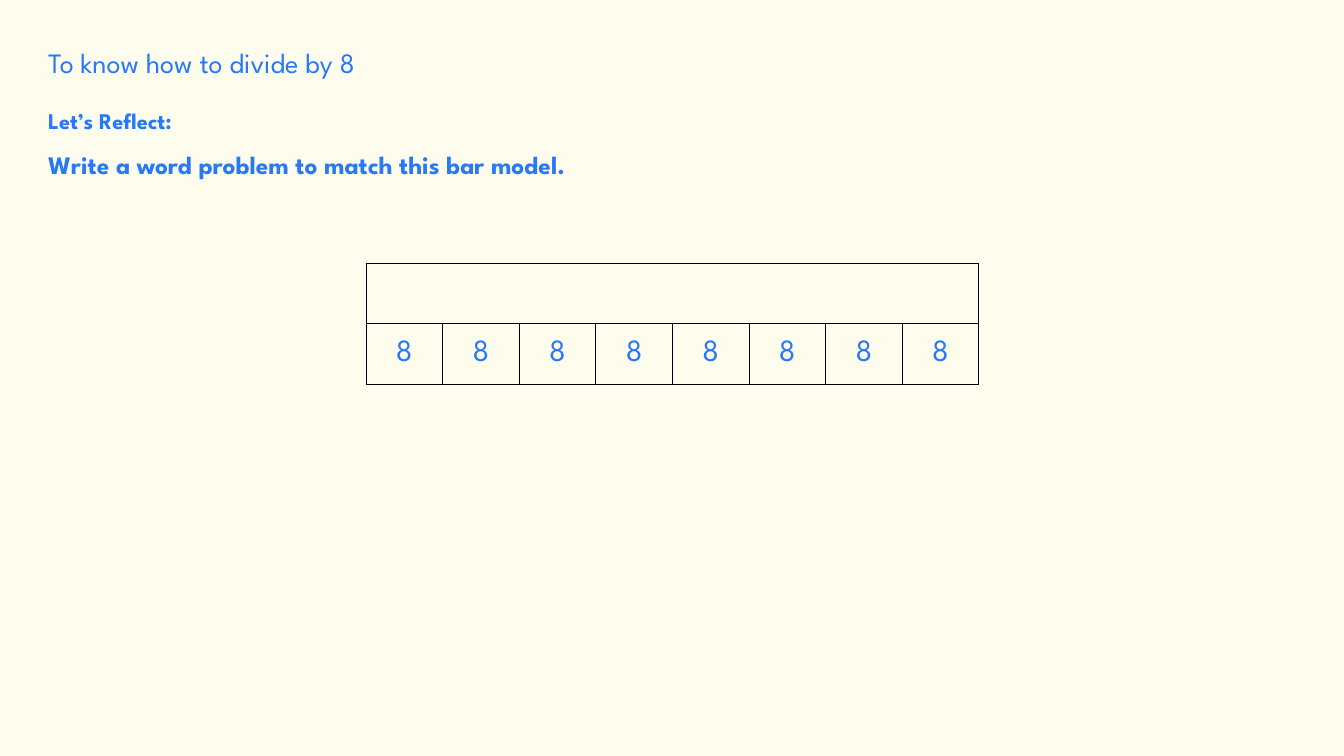
from dataclasses import dataclass

from lxml.etree import SubElement
from pptx import Presentation
from pptx.dml.color import RGBColor as Color
from pptx.enum.text import MSO_ANCHOR as Anchor, PP_ALIGN as Align
from pptx.oxml.ns import qn
from pptx.util import Inches, Pt


@dataclass(frozen=True)
class Theme:
    """Colours, font and type sizes of the lesson."""
    font: str = "League Spartan"
    paper: str = "FEFCED"
    ink: str = "2779F5"
    border: str = "000000"
    border_width: float = 0.75
    title: int = 20
    label: int = 16
    task: int = 18
    number: int = 22


def write_text(frame, text, *, theme, size, bold=False, align=Align.LEFT, spacing=None):
    """Write one formatted paragraph into a text frame."""
    para = frame.paragraphs[0]
    para.alignment = align
    if spacing:
        para.line_spacing = spacing
    span = para.add_run()
    span.text = text
    span.font.name = theme.font
    span.font.size = Pt(size)
    span.font.bold = bold
    span.font.color.rgb = Color.from_string(theme.ink)


class LessonPage:
    """Draws the elements of one lesson slide."""

    def __init__(self, page, theme):
        """Keep the slide and theme and paint the background."""
        self.page = page
        self.theme = theme
        fill = page.background.fill
        fill.solid()
        fill.fore_color.rgb = Color.from_string(theme.paper)

    def heading(self, text, top, width, height, **style):
        """Add a text line at the left margin."""
        box = self.page.shapes.add_textbox(
            Inches(0.38), Inches(top), Inches(width), Inches(height))
        box.text_frame.word_wrap = True
        write_text(box.text_frame, text, theme=self.theme, **style)

    def outline(self, cell):
        """Give a cell thin borders on all sides and no fill."""
        properties = cell._tc.get_or_add_tcPr()
        for side in ("a:lnL", "a:lnR", "a:lnT", "a:lnB"):
            line = SubElement(properties, qn(side), w=str(Pt(self.theme.border_width)))
            fill = SubElement(line, qn("a:solidFill"))
            SubElement(fill, qn("a:srgbClr"), val=self.theme.border)
        cell.fill.background()

    def bar_model(self, parts, left, top, part_width, row_height):
        """Add an empty whole bar above a row of equal parts."""
        count = len(parts)
        table = self.page.shapes.add_table(
            2, count, Inches(left), Inches(top),
            Inches(part_width * count), Inches(row_height * 2)).table
        table.first_row = table.horz_banding = False
        for column in table.columns:
            column.width = Inches(part_width)
        for cell in table.iter_cells():
            self.outline(cell)
            cell.margin_left = cell.margin_right = Inches(0.1)
            cell.margin_top = cell.margin_bottom = Inches(0.1)
            cell.vertical_anchor = Anchor.MIDDLE
        table.cell(0, 0).merge(table.cell(0, count - 1))
        for index, part in enumerate(parts):
            write_text(table.cell(1, index).text_frame, part, theme=self.theme,
                       size=self.theme.number, align=Align.CENTER)


def main():
    """Build and save the slide."""
    deck = Presentation()
    deck.slide_width, deck.slide_height = Inches(13.33), Inches(7.5)
    theme = Theme()
    lesson = LessonPage(deck.slides.add_slide(deck.slide_layouts[6]), theme)
    lesson.heading("To know how to divide by 8", 0.4, 12.02, 0.44, size=theme.title)
    lesson.heading("Let’s Reflect:", 0.88, 6.85, 0.35,
                   size=theme.label, bold=True, spacing=1.5)
    lesson.heading("Write a word problem to match this bar model.", 1.28, 12.61, 0.42,
                   size=theme.task, bold=True, spacing=1.5)
    lesson.bar_model(["8"] * 8, left=3.63, top=2.61, part_width=0.76, row_height=0.6)
    deck.save("out.pptx")


if __name__ == "__main__":
    main()
